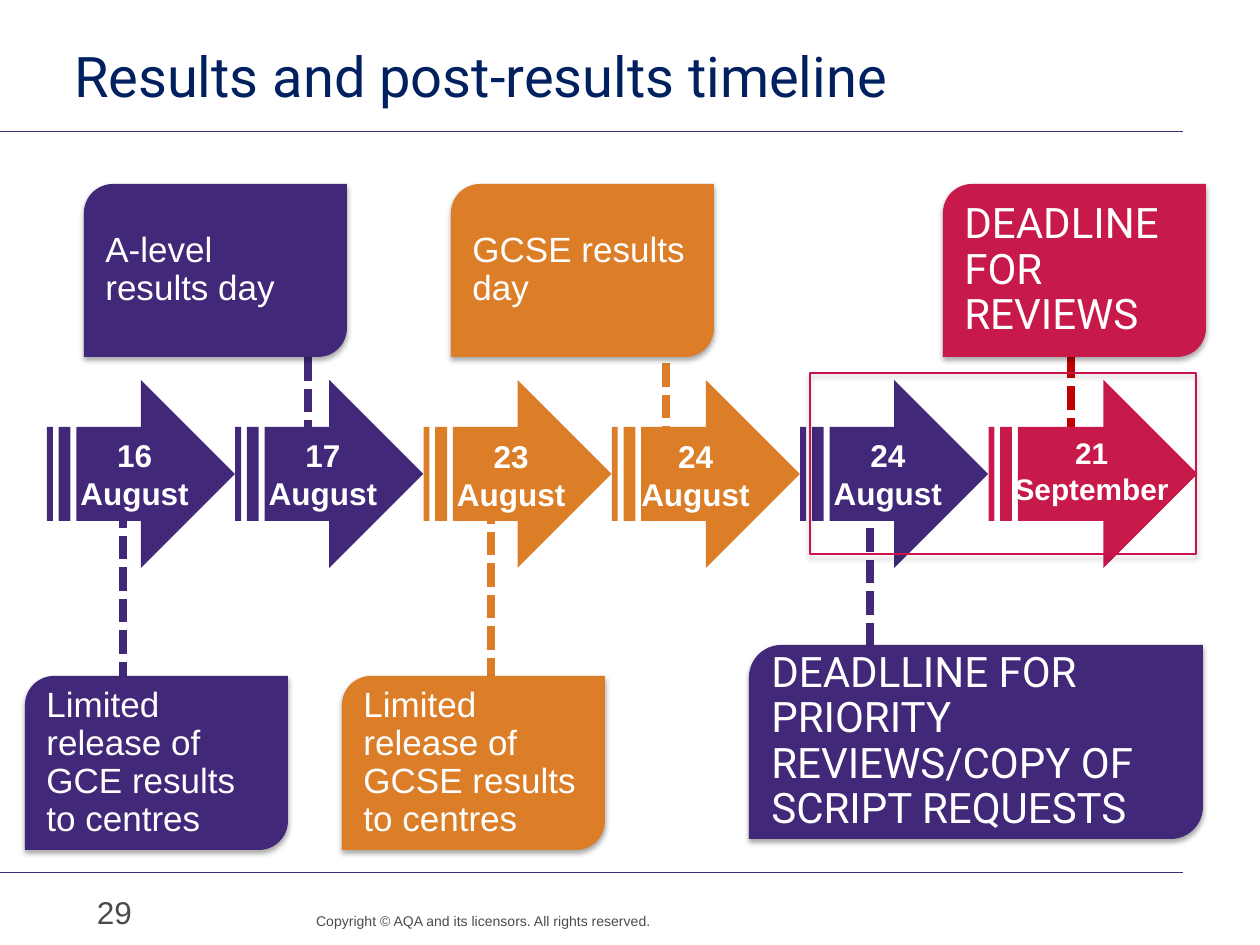
from lxml import etree
from pptx import Presentation
from pptx import util as u
from pptx.dml.color import RGBColor
from pptx.enum import dml, shapes, text
from pptx.oxml import ns

THEME = {
    "purple": "412878", "orange": "DC7D28", "red": "C8194B", "frame": "C81448",
    "dark": "C00000", "navy": "002060", "grey": "4B4B4B", "white": "FFFFFF",
    "sans": "Arial", "head": "Roboto",
    "title": 32, "large": 24, "body": 20, "date": 18, "small": 17, "foot": 8,
}
TITLE = "Results and post-results timeline"
FOOT = "Copyright © AQA and its licensors. All rights reserved."
PAGE = "29"
RULES = [132, 873]
LINKS = [
    (1071, 260, 494, "dark"), (123, 441, 791, "purple"),
    (870, 465, 767, "purple"), (666, 300, 475, "orange"),
    (491, 437, 786, "orange"), (308, 294, 469, "purple"),
]
STEPS = [
    ("16", "August", "purple", {}),
    ("17", "August", "purple", {}),
    ("23", "August", "orange", {"inset": (20, 10, 15, 0), "anchor": "TOP"}),
    ("24", "August", "orange", {"inset": (10, 10, 13, 0), "anchor": "TOP"}),
    ("24", "August", "purple", {}),
    ("21", "September", "red",
     {"inset": (20, 8, 5, 5), "anchor": "TOP", "size": "small"}),
]
BODY = {"font": "sans", "size": "body"}
LOUD = {"font": "head", "size": "large"}
NOTES = [
    ("A-level results day", (84, 184, 263, 173), "purple", BODY),
    ("GCSE results day", (451, 184, 263, 173), "orange", BODY),
    ("DEADLINE FOR REVIEWS", (943, 184, 263, 173), "red", LOUD),
    ("DEADLLINE FOR PRIORITY REVIEWS/COPY OF SCRIPT REQUESTS",
     (749, 645, 454, 194), "purple", LOUD),
    ("Limited release of GCE results to centres",
     (25, 676, 263, 174), "purple", BODY),
    ("Limited release of GCSE results to centres",
     (342, 676, 263, 174), "orange", BODY),
]
FRAME = (810, 373, 386, 181)
LEFT, TOP, SIDE, PITCH, LAST = 47, 380, 188, 188.3, 209


def px(n):
    return u.Emu(round(n * 914400 / 126))


def tint(name):
    return RGBColor.from_string(THEME[name])


def write(shape, lines, font="sans", size="body", color="white", bold=False,
          align="LEFT", anchor="MIDDLE", inset=(13, 6, 13, 6), wrap=True,
          space=None):
    frame = shape.text_frame
    frame.auto_size = text.MSO_AUTO_SIZE.NONE
    frame.word_wrap = wrap
    frame.vertical_anchor = text.MSO_ANCHOR[anchor]
    (frame.margin_left, frame.margin_top,
     frame.margin_right, frame.margin_bottom) = map(px, inset)
    frame.text = "\n".join(lines)
    for para in frame.paragraphs:
        para.alignment = text.PP_ALIGN[align]
        para.space_before = u.Pt(0)
        if space:
            para.line_spacing = space
        for run in para.runs:
            run.font.name = THEME[font]
            run.font.size = u.Pt(THEME[size])
            run.font.bold = bold
            run.font.color.rgb = tint(color)


def shade(shape):
    effect = shape.element.spPr.find(ns.qn("a:effectLst"))
    outer = etree.SubElement(effect, ns.qn("a:outerShdw"), blurRad="39370",
                             dist="22860", dir="5400000", rotWithShape="0")
    color = etree.SubElement(outer, ns.qn("a:srgbClr"), val="000000")
    etree.SubElement(color, ns.qn("a:alpha"), val="35000")


def draw(slide, kind, box, fill=None, line=None):
    shape = slide.shapes.add_shape(shapes.MSO_SHAPE[kind], *map(px, box))
    shape.shadow.inherit = False
    if fill:
        shape.fill.solid()
        shape.fill.fore_color.rgb = tint(fill)
    else:
        shape.fill.background()
    if line:
        shape.line.color.rgb = tint(line)
        shape.line.width = u.Pt(0.75)
    else:
        shape.line.fill.background()
    return shape


def link(slide, ends, color, width, dash=None):
    line = slide.shapes.add_connector(shapes.MSO_CONNECTOR.STRAIGHT,
                                      *map(px, ends))
    line.line.color.rgb = tint(color)
    line.line.width = u.Pt(width)
    if dash:
        line.line.dash_style = dash
    etree.SubElement(line.element.spPr, ns.qn("a:effectLst"))


def main():
    deck = Presentation()
    deck.slide_width, deck.slide_height = px(1260), px(945)
    slide = deck.slides.add_slide(deck.slide_layouts[5])

    title = slide.shapes.title
    title.left, title.top, title.width, title.height = map(
        px, (74, 60, 1109, 59))
    write(title, [TITLE], font="head", size="title", color="navy",
          anchor="TOP", inset=(0, 0, 13, 0), space=u.Pt(28))

    for y in RULES:
        link(slide, (0, y, 1183, y), "purple", 0.6)
    for x, top, end, color in LINKS:
        link(slide, (x, top, x, end), color, 4.5, dml.MSO_LINE.SQUARE_DOT)

    foot = slide.shapes.add_textbox(*map(px, (282, 912, 369, 33)))
    write(foot, [FOOT], size="foot", color="grey", align="RIGHT",
          anchor="TOP", inset=(0, 0, 0, 0), space=u.Pt(10))
    page = slide.shapes.add_textbox(*map(px, (84, 887, 96, 50)))
    write(page, [PAGE], size="date", color="grey", anchor="TOP")

    for i, (day, month, color, extra) in enumerate(STEPS):
        wide = LAST if i == len(STEPS) - 1 else SIDE
        arrow = draw(slide, "STRIPED_RIGHT_ARROW",
                     (LEFT + i * PITCH, TOP, wide, SIDE), fill=color)
        form = {"size": "date", "inset": (10, 5, 5, 5), **extra}
        write(arrow, [day, month], bold=True, align="CENTER", wrap=False,
              **form)

    shade(draw(slide, "RECTANGLE", FRAME, line="frame"))
    for words, box, color, form in NOTES:
        note = draw(slide, "ROUND_2_DIAG_RECTANGLE", box, fill=color)
        shade(note)
        write(note, [words], space=0.9, **form)

    deck.save("out.pptx")


if __name__ == "__main__":
    main()
